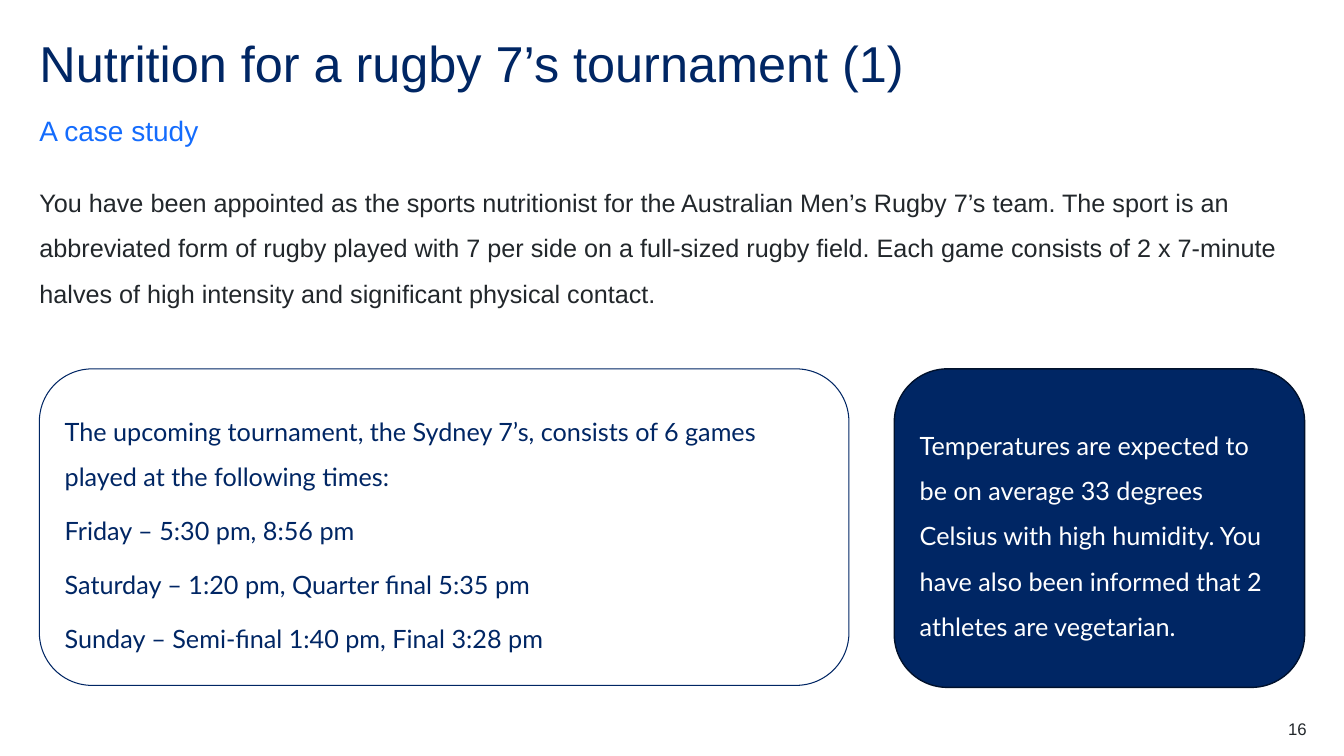
import dataclasses

import pptx
import pptx.dml.color
import pptx.enum.shapes
import pptx.enum.text
import pptx.util

ALIGN = pptx.enum.text.PP_ALIGN
ANCHOR = pptx.enum.text.MSO_ANCHOR


@dataclasses.dataclass(frozen=True)
class Theme:
    navy: str = "002664"
    deep_navy: str = "00112C"
    blue: str = "146CFD"
    ink: str = "22272B"
    white: str = "FFFFFF"
    plain_font: str = "Arial"
    card_font: str = "Lato"
    title_size: int = 36
    subtitle_size: int = 20
    body_size: int = 18
    number_size: int = 12


def rgb(color):
    return pptx.dml.color.RGBColor.from_string(color)


class SlideBuilder:
    """Places elements by percentages of the slide's width and height."""

    def __init__(self, deck, theme):
        self.deck = deck
        self.theme = theme
        self.page = deck.slides.add_slide(deck.slide_layouts.get_by_name("Title Only"))

    def area(self, left, top, width, height):
        across, down = self.deck.slide_width, self.deck.slide_height
        return [round(share * side / 100)
                for share, side in zip((left, top, width, height), (across, down) * 2)]

    def set_text(self, box, text, size, color, font=None, anchor=ANCHOR.TOP,
                 align=ALIGN.LEFT, spacing=1.0, after=0):
        frame = box.text_frame
        frame.text = text
        frame.word_wrap = True
        frame.auto_size = pptx.enum.text.MSO_AUTO_SIZE.NONE
        frame.vertical_anchor = anchor
        for para in frame.paragraphs:
            para.alignment = align
            para.line_spacing = spacing
            para.space_before = pptx.util.Pt(0)
            para.space_after = pptx.util.Pt(after)
            for span in para.runs:
                span.font.name = font or self.theme.plain_font
                span.font.size = pptx.util.Pt(size)
                span.font.color.rgb = rgb(color)

    def clear_margins(self, box):
        frame = box.text_frame
        frame.margin_left = frame.margin_right = 0
        frame.margin_top = frame.margin_bottom = 0

    def title(self, place, text):
        box = self.page.shapes.title
        box.left, box.top, box.width, box.height = self.area(*place)
        self.clear_margins(box)
        self.set_text(box, text, self.theme.title_size, self.theme.navy, spacing=0.9)

    def text(self, place, text, size, color, **style):
        box = self.page.shapes.add_textbox(*self.area(*place))
        self.clear_margins(box)
        self.set_text(box, text, size, color, **style)

    def card(self, place, text, color, line, line_width, fill=None):
        box = self.page.shapes.add_shape(
            pptx.enum.shapes.MSO_SHAPE.ROUNDED_RECTANGLE, *self.area(*place))
        box.shadow.inherit = False
        if fill:
            box.fill.solid()
            box.fill.fore_color.rgb = rgb(fill)
        else:
            box.fill.background()
        box.line.color.rgb = rgb(line)
        box.line.width = pptx.util.Pt(line_width)
        self.set_text(box, text, self.theme.body_size, color, self.theme.card_font,
                      anchor=ANCHOR.MIDDLE, spacing=1.5, after=6)


def main():
    deck = pptx.Presentation()
    deck.slide_width = pptx.util.Inches(13.33)
    deck.slide_height = pptx.util.Inches(7.5)
    theme = Theme()
    slide = SlideBuilder(deck, theme)
    left, width, card_top = 2.93, 94.22, 48.8

    slide.title((left, 5.2, width, 8), "Nutrition for a rugby 7’s tournament (1)")
    slide.text((left, 14.27, width, 5.2), "A case study", theme.subtitle_size,
               theme.blue, anchor=ANCHOR.BOTTOM, spacing=1.5, after=12)
    slide.text(
        (left, 22.8, width, 21.87),
        "You have been appointed as the sports nutritionist for the Australian Men’s "
        "Rugby 7’s team. The sport is an abbreviated form of rugby played with 7 per "
        "side on a full-sized rugby field. Each game consists of 2 x 7-minute halves "
        "of high intensity and significant physical contact.",
        theme.body_size, theme.ink, spacing=1.5, after=6)

    schedule = (
        "The upcoming tournament, the Sydney 7’s, consists of 6 games played at the "
        "following times:",
        "Friday – 5:30 pm, 8:56 pm",
        "Saturday – 1:20 pm, Quarter final 5:35 pm",
        "Sunday – Semi-final 1:40 pm, Final 3:28 pm",
    )
    slide.card((left, card_top, 60.24, 41.87), "\n".join(schedule),
               theme.navy, theme.navy, 0.75)
    slide.card(
        (66.54, card_top, 30.53, 42.13),
        "Temperatures are expected to be on average 33 degrees Celsius with high "
        "humidity. You have also been informed that 2 athletes are vegetarian.",
        theme.white, theme.deep_navy, 1, fill=theme.navy)

    slide.text((91.3, 95.07, 5.93, 2.67), "16", theme.number_size, theme.ink,
               align=ALIGN.RIGHT)
    deck.save("out.pptx")


if __name__ == "__main__":
    main()
